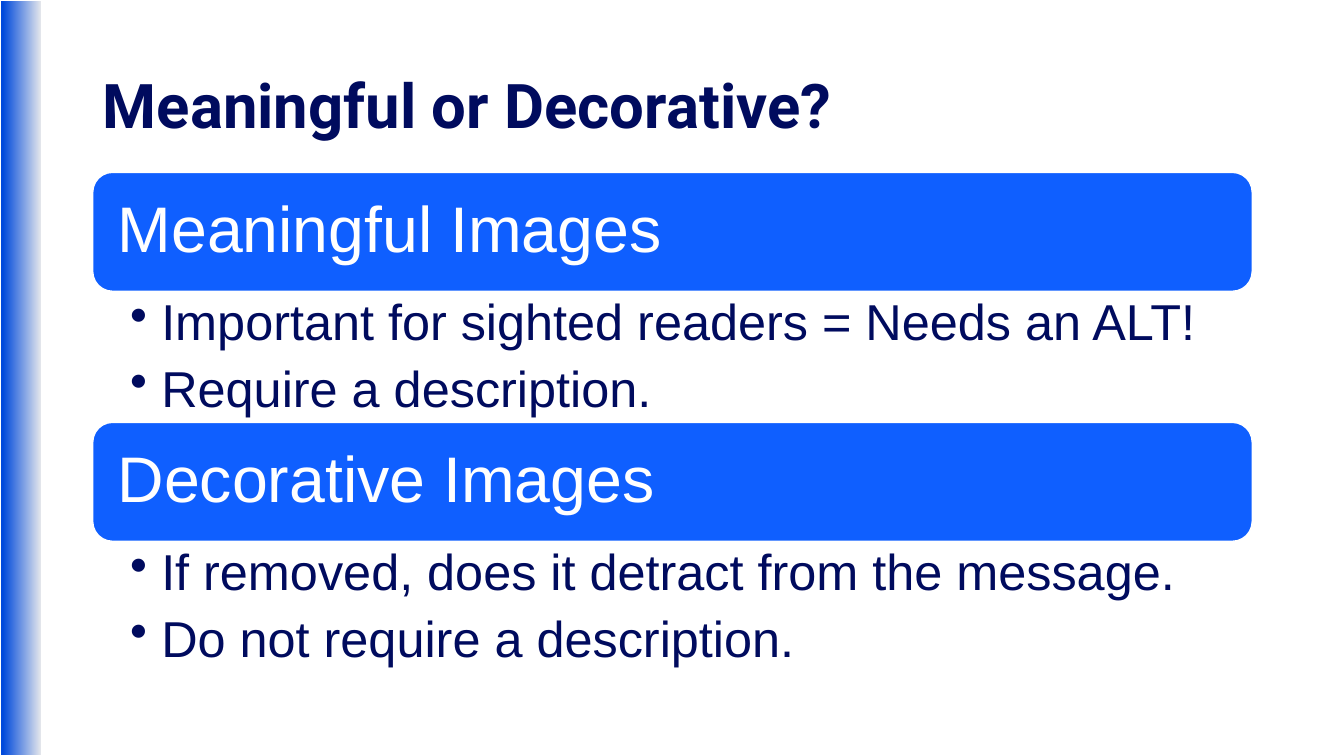
from lxml.etree import SubElement
from pptx import Presentation
from pptx.dml.color import RGBColor
from pptx.enum.shapes import MSO_SHAPE as Shape
from pptx.enum.text import MSO_ANCHOR as Anchor, PP_ALIGN as Align
from pptx.oxml.ns import qn
from pptx.util import Inches, Pt

WIDTH, HEIGHT = 13.33, 7.5
COLORS = {"navy": "000B5E", "blue": "0F5FFF", "white": "FFFFFF",
          "bar_start": "0049DB", "bar_end": "ECECEC"}

LEFT, CONTENT_WIDTH = 0.92, 11.5
TOP, BAND_HEIGHT, LIST_HEIGHT = 1.71, 1.18, 1.3
SECTIONS = [
    ("Meaningful Images",
     ["Important for sighted readers = Needs an ALT!", "Require a description."]),
    ("Decorative Images",
     ["If removed, does it detract from the message.", "Do not require a description."]),
]


def color(name):
    return RGBColor.from_string(COLORS[name])


class SlideBuilder:
    """Holds the slide and its text style; lengths are in inches."""

    title_font, body_font = "Roboto", "Arial"

    def __init__(self, presentation):
        self.slide = presentation.slides.add_slide(presentation.slide_layouts[5])

    def place(self, left, top, width, height):
        return [Inches(value) for value in (left, top, width, height)]

    def frame(self, shape, anchor, sides, ends):
        frame = shape.text_frame
        frame.word_wrap = True
        frame.vertical_anchor = anchor
        frame.margin_left = frame.margin_right = Inches(sides)
        frame.margin_top = frame.margin_bottom = Inches(ends)
        return frame

    def set_text(self, paragraph, text, size, color_name, font_name, bold=False):
        paragraph.text = text
        paragraph.alignment = Align.LEFT
        paragraph.line_spacing = 0.9
        font = paragraph.font
        font.name, font.size, font.bold = font_name, Pt(size), bold
        font.color.rgb = color(color_name)

    def box(self, kind, area, line_width):
        shape = self.slide.shapes.add_shape(kind, *self.place(*area))
        shape.shadow.inherit = False
        shape.line.color.rgb = color("white")
        shape.line.width = Pt(line_width)
        return shape

    def side_bar(self, width):
        fill = self.box(Shape.RECTANGLE, (0, 0, width, HEIGHT), 1.5).fill
        fill.gradient()
        fill.gradient_angle = 0
        stops = ((0.07, "bar_start"), (1, "bar_end"))
        for stop, (position, name) in zip(fill.gradient_stops, stops):
            stop.position = position
            stop.color.rgb = color(name)

    def title(self, text, area):
        title = self.slide.shapes.title
        title.left, title.top, title.width, title.height = self.place(*area)
        frame = self.frame(title, Anchor.MIDDLE, 0.1, 0.05)
        self.set_text(frame.paragraphs[0], text, 44, "navy", self.title_font, True)

    def band(self, text, area):
        shape = self.box(Shape.ROUNDED_RECTANGLE, area, 1)
        shape.fill.solid()
        shape.fill.fore_color.rgb = color("blue")
        frame = self.frame(shape, Anchor.MIDDLE, 0.19, 0.19)
        self.set_text(frame.paragraphs[0], text, 46, "white", self.body_font)

    def bullets(self, items, area):
        textbox = self.slide.shapes.add_textbox(*self.place(*area))
        frame = self.frame(textbox, Anchor.TOP, 0.37, 0.06)
        for index, item in enumerate(items):
            paragraph = frame.add_paragraph() if index else frame.paragraphs[0]
            paragraph.level = 1
            properties = paragraph._p.get_or_add_pPr()
            properties.set("marL", str(Inches(0.31)))
            properties.set("indent", str(-Inches(0.31)))
            SubElement(properties, qn("a:buChar"), char="•")
            paragraph.space_after = Pt(8.4)
            self.set_text(paragraph, item, 36, "navy", self.body_font)


def main():
    presentation = Presentation()
    presentation.slide_width = Inches(WIDTH)
    presentation.slide_height = Inches(HEIGHT)
    builder = SlideBuilder(presentation)

    # Side bar and title
    builder.side_bar(0.42)
    builder.title("Meaningful or Decorative?", (LEFT, 0.35, CONTENT_WIDTH, 1.45))

    # Each section: a heading band with its bullets below
    for row, (heading, items) in enumerate(SECTIONS):
        top = TOP + row * (BAND_HEIGHT + LIST_HEIGHT)
        builder.band(heading, (LEFT, top, CONTENT_WIDTH, BAND_HEIGHT))
        builder.bullets(items, (LEFT, top + BAND_HEIGHT, CONTENT_WIDTH, LIST_HEIGHT))

    presentation.save("out.pptx")


if __name__ == "__main__":
    main()
